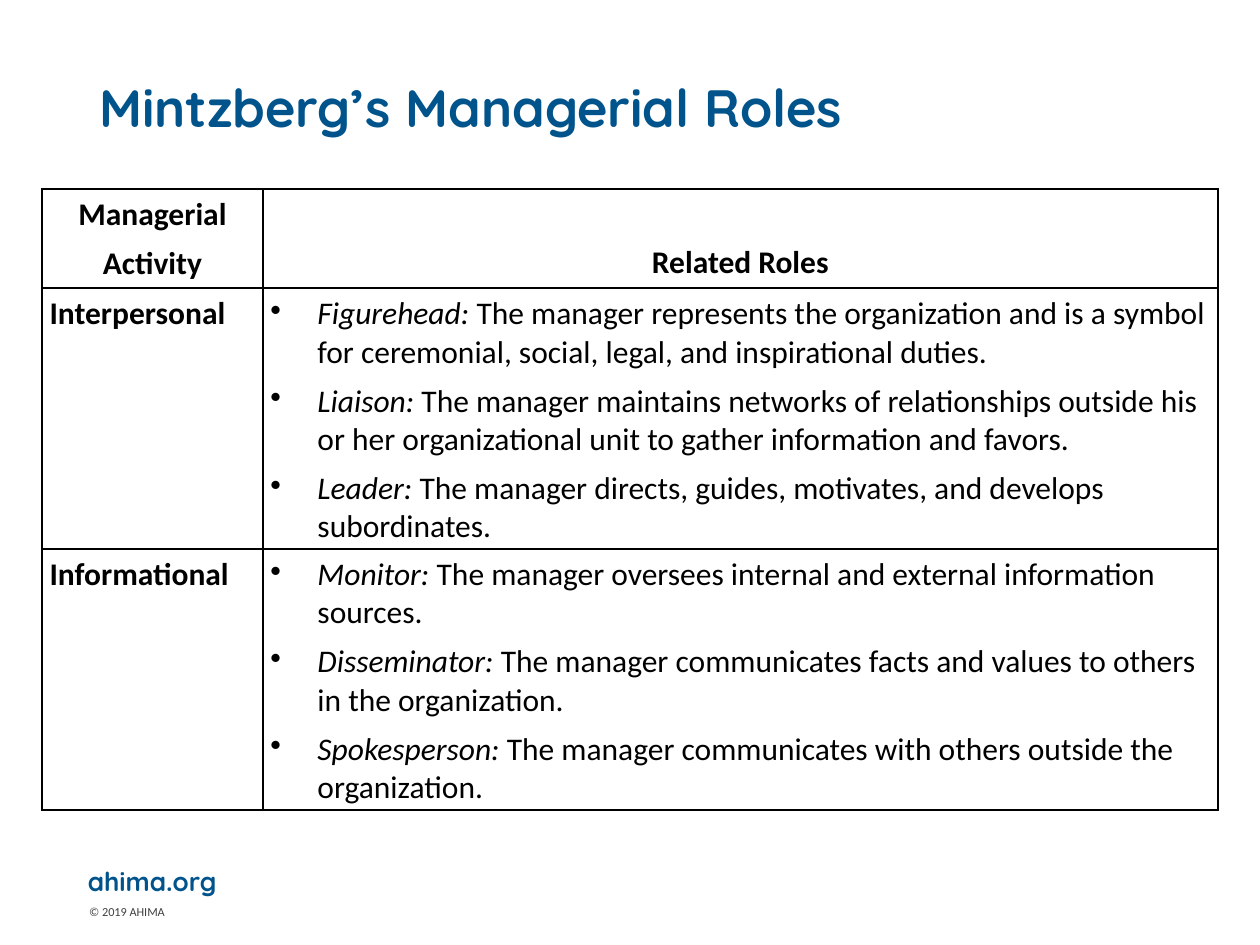
import pptx
import pptx.dml.color
import pptx.enum.text
import pptx.oxml
import pptx.oxml.ns
import pptx.util
from lxml import etree

Cm = pptx.util.Cm
Pt = pptx.util.Pt
ALIGN = pptx.enum.text.PP_ALIGN
ANCHOR = pptx.enum.text.MSO_ANCHOR

COLORS = {"brand": "00548B", "ink": "000000", "note": "404040", "paper": "FFFFFF"}
TITLE_FONT = {"name": "Quicksand", "size": Pt(30), "bold": True}
SITE_FONT = {"name": "Quicksand", "size": Pt(15), "bold": True}
NOTE_FONT = {"name": "Calibri", "size": Pt(7)}
BODY_FONT = {"name": "Calibri", "size": Pt(18)}
LABEL_FONT = {**BODY_FONT, "bold": True}
ROLE_FONT = {**BODY_FONT, "italic": True}

ACTIVITIES = {
    "Interpersonal": {
        "Figurehead:": " The manager represents the organization and is a symbol for ceremonial, "
                       "social, legal, and inspirational duties.",
        "Liaison:": " The manager maintains networks of relationships outside his or her "
                    "organizational unit to gather information and favors.",
        "Leader:": " The manager directs, guides, motivates, and develops subordinates.",
    },
    "Informational": {
        "Monitor:": " The manager oversees internal and external information sources.",
        "Disseminator:": " The manager communicates facts and values to others in the organization.",
        "Spokesperson:": " The manager communicates with others outside the organization.",
    },
}


def rgb(color):
    return pptx.dml.color.RGBColor.from_string(COLORS[color])


def apply_format(target, values):
    for name, value in values.items():
        setattr(target, name, value)


def add_run(paragraph, text, font, color="ink"):
    run = paragraph.add_run()
    run.text = text
    apply_format(run.font, font)
    run.font.color.rgb = rgb(color)


def add_line(slide, box, text, font, color, frame_format, line_spacing=1.0):
    frame = slide.shapes.add_textbox(*box).text_frame
    apply_format(frame, {"word_wrap": True, **frame_format})
    paragraph = frame.paragraphs[0]
    paragraph.line_spacing = line_spacing
    add_run(paragraph, text, font, color)


def add_title(slide, left, top, width, height):
    add_line(slide, (left, top, width, height), "Mintzberg’s Managerial Roles", TITLE_FONT, "brand",
             {"vertical_anchor": ANCHOR.MIDDLE, "margin_bottom": Cm(1.4)}, 0.9)


def add_footer(slide, left, top, width):
    add_line(slide, (left, top, Cm(4.7), Cm(0.89)), "ahima.org", SITE_FONT, "brand", {})
    add_line(slide, (left + Cm(0.03), top + Cm(0.79), width, Cm(0.56)),
             "© 2019 AHIMA", NOTE_FONT, "note", {})


def add_borders(cell):
    properties = cell._tc.get_or_add_tcPr()
    for position, side in enumerate(("lnL", "lnR", "lnT", "lnB")):
        border = pptx.oxml.parse_xml(
            f'<a:{side} {pptx.oxml.ns.nsdecls("a")} w="{Pt(1)}"><a:solidFill>'
            f'<a:srgbClr val="{COLORS["ink"]}"/></a:solidFill></a:{side}>')
        properties.insert(position, border)


def add_bullet(paragraph, indent):
    properties = paragraph._p.get_or_add_pPr()
    properties.set("marL", str(indent))
    properties.set("indent", str(-indent))
    bullet = etree.SubElement(properties, pptx.oxml.ns.qn("a:buChar"))
    bullet.set("char", "•")


def fill_cell(cell, paragraphs, anchor=ANCHOR.TOP, align=ALIGN.LEFT, bulleted=False):
    apply_format(cell, {"vertical_anchor": anchor, "margin_left": Cm(0.15), "margin_right": Cm(0.15),
                        "margin_top": Cm(0.13), "margin_bottom": Cm(0.13)})
    cell.fill.solid()
    cell.fill.fore_color.rgb = rgb("paper")
    add_borders(cell)
    for index, runs in enumerate(paragraphs):
        frame = cell.text_frame
        paragraph = frame.add_paragraph() if index else frame.paragraphs[0]
        if bulleted:
            add_bullet(paragraph, Cm(0.95))
        apply_format(paragraph, {"alignment": align, "space_after": Pt(6)})
        for text, font in runs:
            add_run(paragraph, text, font)


def add_roles_table(slide, left, top, width, height):
    header_height, activity_width = Cm(2), Cm(4.45)
    roles_table = slide.shapes.add_table(len(ACTIVITIES) + 1, 2, left, top, width, height).table
    apply_format(roles_table, {"first_row": False, "horz_banding": False})
    roles_table.columns[0].width = activity_width
    roles_table.columns[1].width = width - activity_width
    roles_table.rows[0].height = header_height
    headings = (("Managerial", "Activity"), ("Related Roles",))
    for column, lines in enumerate(headings):
        fill_cell(roles_table.cell(0, column), [[(line, LABEL_FONT)] for line in lines],
                  ANCHOR.BOTTOM, ALIGN.CENTER)
    for row, (activity, roles) in enumerate(ACTIVITIES.items(), 1):
        roles_table.rows[row].height = (height - header_height) // len(ACTIVITIES)
        fill_cell(roles_table.cell(row, 0), [[(activity, LABEL_FONT)]])
        fill_cell(roles_table.cell(row, 1),
                  [[(role, ROLE_FONT), (duty, BODY_FONT)] for role, duty in roles.items()],
                  bulleted=True)


def main():
    presentation = pptx.Presentation()
    apply_format(presentation, {"slide_width": Cm(25.4), "slide_height": Cm(19.05)})
    slide = presentation.slides.add_slide(presentation.slide_layouts[6])
    add_footer(slide, Cm(1.52), Cm(17.32), Cm(13))
    add_roles_table(slide, Cm(0.85), Cm(3.81), Cm(23.7), Cm(12.5))
    add_title(slide, Cm(1.75), Cm(1.02), Cm(21.9), Cm(3.68))
    presentation.save("out.pptx")


if __name__ == "__main__":
    main()
